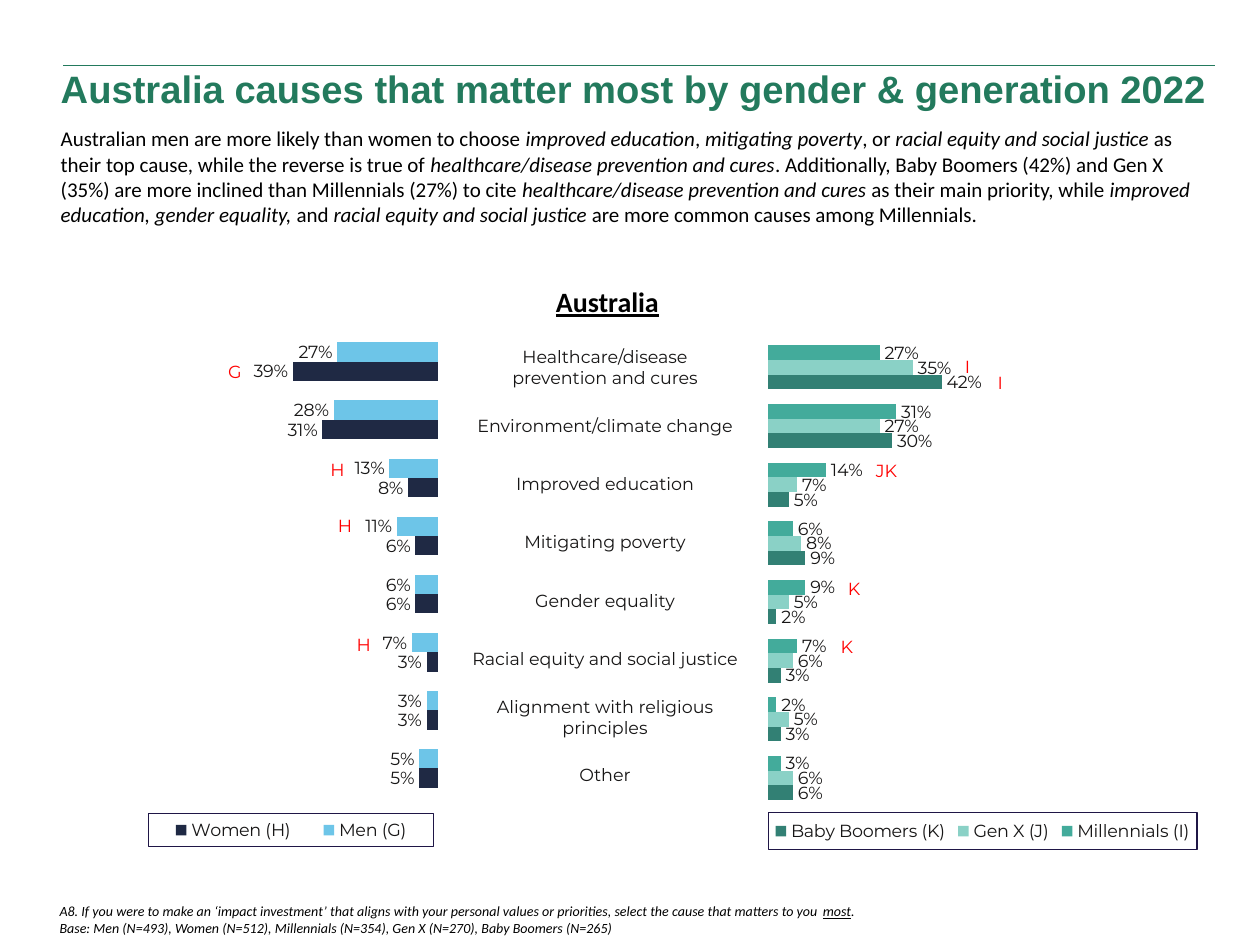
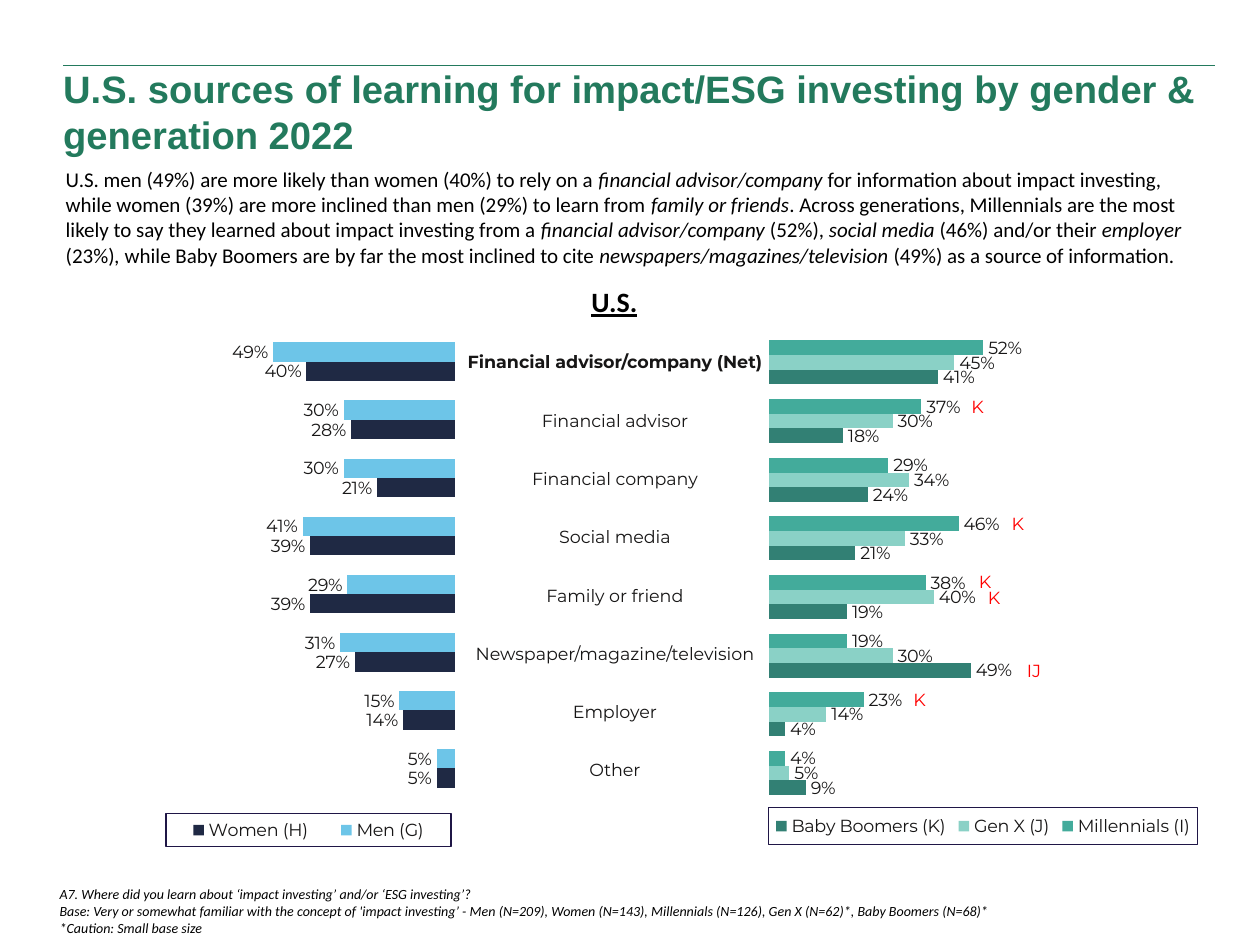
from lxml.etree import SubElement
from pptx import Presentation
from pptx.chart.data import CategoryChartData
from pptx.dml.color import RGBColor
from pptx.enum.chart import XL_CHART_TYPE, XL_LABEL_POSITION, XL_LEGEND_POSITION
from pptx.enum.shapes import MSO_CONNECTOR
from pptx.enum.text import MSO_ANCHOR, MSO_AUTO_SIZE, PP_ALIGN
from pptx.oxml import parse_xml
from pptx.oxml.ns import nsdecls, qn
from pptx.util import Cm, Pt

COLORS = {
    "title": "237A5D", "text": "000000", "chart_text": "171616", "marker": "FF0000",
    "legend_border": "1F1646", "men": "6DC5E8", "women": "1F2944",
    "millennials": "43AB9B", "gen_x": "8AD1C6", "boomers": "328074",
}
GENDERS = [("Men (G)", "men"), ("Women (H)", "women")]
GENERATIONS = [("Millennials (I)", "millennials"), ("Gen X (J)", "gen_x"),
               ("Baby Boomers (K)", "boomers")]

# Fractions of the chart area: left, top, width, height
GENDER_LAYOUT = {"plot": (0.09, 0.04, 0.9, 0.86), "legend": (0.29, 0.93, 0.69, 0.06)}
GENERATION_LAYOUT = {"plot": (0.16, 0.03, 0.79, 0.89), "legend": (0.16, 0.93, 0.82, 0.07)}

MARKER_WIDTHS = {"G": 0.79, "H": 0.81, "I": 0.61, "K": 0.76, "JK": 0.94, "IJ": 0.79}

AUSTRALIA = {
    "title": "Australia causes that matter most by gender & generation 2022",
    "title_box": (0.97, 1.19, 24.43, 1.19),
    "summary": "Australian men are more likely than women to choose _improved education_, "
               "_mitigating poverty_, or _racial equity and social justice _as their top "
               "cause, while the reverse is true of _healthcare/disease prevention and "
               "cures_. Additionally, Baby Boomers (42%) and Gen X (35%) are more inclined "
               "than Millennials (27%) to cite _healthcare/disease prevention and cures _as "
               "their main priority, while _improved education, gender equality, _and "
               "_racial equity and social justice_ are more common causes among Millennials.",
    "summary_box": (0.97, 2.41, 23.42, 2.31),
    "region": "Australia",
    "region_box": (10.9, 5.61, 2.69, 0.94),
    "answers": ["Healthcare/disease\nprevention and cures", "Environment/climate change",
                "Improved education", "Mitigating poverty", "Gender equality",
                "Racial equity and social justice", "Alignment with religious\nprinciples",
                "Other"],
    "answers_at": (8.36, 6.81),
    "by_gender": [(27, 28, 13, 11, 6, 7, 3, 5), (39, 31, 8, 6, 6, 3, 3, 5)],
    "gender_box": (0.58, 6.27, 8.33, 10.9),
    "by_generation": [(27, 31, 14, 6, 9, 7, 2, 3), (35, 27, 7, 8, 5, 6, 5, 6),
                      (42, 30, 5, 9, 2, 3, 3, 6)],
    "generation_box": (13.8, 6.5, 10.54, 10.64),
    "markers": [("G", 4.34, 7.16), ("H", 6.4, 9.12), ("H", 6.55, 10.26), ("H", 6.93, 12.65),
                ("I", 19.2, 7.06), ("I", 19.86, 7.37), ("JK", 17.4, 9.14),
                ("K", 16.84, 11.53), ("K", 16.69, 12.7)],
    "footnote": "A8. If you were to make an ‘impact investment’ that aligns with your personal "
                "values or priorities, select the cause that matters to you _most_.\n"
                "Base: Men (N=493), Women (N=512), Millennials (N=354), Gen X (N=270), "
                "Baby Boomers (N=265)",
}
US = {
    "title": "U.S. sources of learning for impact/ESG investing by gender & generation 2022",
    "title_box": (1.02, 1.19, 23.98, 2.11),
    "summary": "U.S. men (49%) are more likely than women (40%) to rely on a _financial "
               "advisor/company _for information about impact investing, while women (39%) "
               "are more inclined than men (29%) to learn from _family or friends_. Across "
               "generations, Millennials are the most likely to say they learned about "
               "impact investing from a _financial advisor/company _(52%), _social media "
               "_(46%) and/or their _employer _(23%)_, _while Baby Boomers are by far the "
               "most inclined to cite _newspapers/magazines/television _(49%) as a source "
               "of information.",
    "summary_box": (1.07, 3.23, 23.32, 2.31),
    "region": "U.S.",
    "region_box": (11.66, 5.61, 1.45, 0.94),
    "answers": ["Financial advisor/company (Net)", "Financial advisor", "Financial company",
                "Social media", "Family or friend", "Newspaper/magazine/television",
                "Employer", "Other"],
    "answers_at": (8.56, 6.71),
    "by_gender": [(49, 30, 30, 41, 29, 31, 15, 5), (40, 28, 21, 39, 39, 27, 14, 5)],
    "gender_box": (0.93, 6.27, 8.33, 10.9),
    "by_generation": [(52, 37, 29, 46, 38, 19, 23, 4), (45, 30, 34, 33, 40, 30, 14, 5),
                      (41, 18, 24, 21, 19, 49, 4, 9)],
    "generation_box": (13.81, 6.4, 10.54, 10.64),
    "markers": [("K", 19.33, 7.85), ("K", 20.14, 10.21), ("K", 19.48, 11.38),
                ("K", 19.66, 11.71), ("K", 18.16, 13.77), ("IJ", 20.45, 13.18)],
    "footnote": "A7. Where did you learn about ‘impact investing’ and/or ‘ESG investing’?\n"
                "Base: Very or somewhat familiar with the concept of 'impact investing’ - "
                "Men (N=209), Women (N=143), Millennials (N=126), Gen X (N=62)*, "
                "Baby Boomers (N=68)*\n*Caution: Small base size",
}


def rgb(name):
    return RGBColor.from_string(COLORS[name])


def write_text(frame, text, *, size, font="Calibri", color="text", align=PP_ALIGN.LEFT,
               bold=False, italic=False, underline=False, toggle="italic"):
    """Write one paragraph a line; underscores switch the toggle format on and off."""
    for number, line in enumerate(text.split("\n")):
        paragraph = frame.paragraphs[0] if number == 0 else frame.add_paragraph()
        paragraph.alignment = align
        paragraph.space_before = Pt(0)
        for part, words in enumerate(line.split("_")):
            if not words:
                continue
            run = paragraph.add_run()
            run.text = words
            run.font.size, run.font.name = Pt(size), font
            run.font.color.rgb = rgb(color)
            run.font.bold, run.font.italic, run.font.underline = bold, italic, underline
            if part % 2:
                setattr(run.font, toggle, True)


def place(shape, box):
    shape.left, shape.top, shape.width, shape.height = map(Cm, box)


def fill_placeholder(placeholder, text, box, anchor=MSO_ANCHOR.TOP, **text_format):
    place(placeholder, box)
    frame = placeholder.text_frame
    frame.word_wrap = True
    frame.auto_size = MSO_AUTO_SIZE.NONE
    frame.vertical_anchor = anchor
    write_text(frame, text, **text_format)
    for paragraph in frame.paragraphs:
        properties = paragraph._p.get_or_add_pPr()
        properties.set("marL", "0")
        properties.set("indent", "0")
        SubElement(properties, qn("a:buNone"))
    return frame


def add_label(slide, text, box, **text_format):
    label = slide.shapes.add_textbox(*map(Cm, box))
    label.text_frame.word_wrap = False
    write_text(label.text_frame, text, align=PP_ALIGN.CENTER, **text_format)


def add_top_rule(slide):
    rule = slide.shapes.add_connector(MSO_CONNECTOR.STRAIGHT, Cm(1.27), Cm(1.32),
                                      Cm(24.49), Cm(1.32))
    rule.line.color.rgb = rgb("title")
    rule.line.width = Pt(0.5)
    SubElement(rule._element.spPr, qn("a:effectLst"))


def set_chart_layout(parent, position, fractions, inner=False):
    """Give a plot area or legend a fixed place inside its chart."""
    for old_layout in parent.findall(qn("c:layout")):
        parent.remove(old_layout)
    layout = parse_xml(f'<c:layout {nsdecls("c")}><c:manualLayout/></c:layout>')
    settings = [("layoutTarget", "inner")] if inner else []
    settings += [("xMode", "edge"), ("yMode", "edge"), *zip("xywh", fractions)]
    for tag, value in settings:
        SubElement(layout[0], qn(f"c:{tag}")).set("val", str(value))
    parent.insert(position, layout)


def add_legend(chart, fractions):
    chart.has_legend = True
    legend = chart.legend
    legend.position = XL_LEGEND_POSITION.RIGHT
    legend.include_in_layout = False
    set_chart_layout(legend._element, 1, fractions)
    border = parse_xml(
        f'<c:spPr {nsdecls("c", "a")}><a:ln w="9525"><a:solidFill>'
        f'<a:srgbClr val="{COLORS["legend_border"]}"/></a:solidFill></a:ln></c:spPr>')
    legend._element.find(qn("c:overlay")).addnext(border)


def add_bar_chart(slide, box, groups, percentages, layout, leftward=False):
    data = CategoryChartData(number_format="0%")
    data.categories = [str(number) for number in range(1, len(percentages[0]) + 1)]
    for (group, _), shares in zip(groups, percentages):
        data.add_series(group, [share / 100 for share in shares])
    chart = slide.shapes.add_chart(XL_CHART_TYPE.BAR_CLUSTERED, *map(Cm, box), data).chart
    chart.has_title = False
    chart.font.size, chart.font.name = Pt(10), "Montserrat"
    chart.font.color.rgb = rgb("chart_text")

    chart.category_axis.reverse_order = True
    chart.value_axis.reverse_order = leftward
    chart.value_axis.minimum_scale, chart.value_axis.maximum_scale = 0, 1
    chart.value_axis.has_major_gridlines = False
    chart.category_axis.visible = chart.value_axis.visible = False

    bars = chart.plots[0]
    bars.gap_width, bars.overlap = 100, 0
    bars.vary_by_categories = False
    for series, (_, color) in zip(bars.series, groups):
        series.format.fill.solid()
        series.format.fill.fore_color.rgb = rgb(color)
        labels = series.data_labels
        labels.show_value = True
        labels.number_format, labels.number_format_is_linked = "0%", False
        labels.position = XL_LABEL_POSITION.OUTSIDE_END

    plot_area = chart._chartSpace.find(f'{qn("c:chart")}/{qn("c:plotArea")}')
    set_chart_layout(plot_area, 0, layout["plot"], inner=True)
    add_legend(chart, layout["legend"])


def clear_borders(cell):
    properties = cell._tc.get_or_add_tcPr()
    for position, side in enumerate("LRTB"):
        properties.insert(position, parse_xml(
            f'<a:ln{side} {nsdecls("a")} w="0"><a:noFill/></a:ln{side}>'))


def add_answers(slide, answers, left, top):
    table = slide.shapes.add_table(len(answers), 1, Cm(left), Cm(top), Cm(7.67), Cm(9.4)).table
    table.first_row = table.horz_banding = False
    for row, answer in enumerate(answers):
        cell = table.cell(row, 0)
        cell.fill.background()
        clear_borders(cell)
        cell.vertical_anchor = MSO_ANCHOR.MIDDLE
        cell.margin_left = cell.margin_right = cell.margin_top = Cm(0.03)
        cell.margin_bottom = 0
        write_text(cell.text_frame, answer, size=10, font="Montserrat", color="chart_text",
                   align=PP_ALIGN.CENTER, bold=answer.endswith("(Net)"))


def add_survey_slide(presentation, survey):
    slide = presentation.slides.add_slide(presentation.slide_layouts.get_by_name("Two Content"))
    title, summary, footnote = slide.placeholders
    add_top_rule(slide)
    fill_placeholder(title, survey["title"], survey["title_box"], size=21.8, font="Arial",
                     color="title", bold=True)
    fill_placeholder(summary, survey["summary"], survey["summary_box"], size=12)
    footnote_frame = fill_placeholder(footnote, survey["footnote"], (1.07, 17.91, 21.06, 1.09),
                                      MSO_ANCHOR.BOTTOM, size=8, italic=True,
                                      toggle="underline")
    footnote_frame.margin_left = footnote_frame.margin_right = Cm(0.13)

    add_answers(slide, survey["answers"], *survey["answers_at"])
    add_bar_chart(slide, survey["gender_box"], GENDERS, survey["by_gender"],
                  GENDER_LAYOUT, leftward=True)
    add_bar_chart(slide, survey["generation_box"], GENERATIONS, survey["by_generation"],
                  GENERATION_LAYOUT)
    add_label(slide, survey["region"], survey["region_box"], size=16, bold=True, underline=True)
    for letters, left, top in survey["markers"]:
        add_label(slide, letters, (left, top, MARKER_WIDTHS[letters], 0.69), size=10,
                  font="Montserrat", color="marker")


def main():
    presentation = Presentation()
    presentation.slide_width, presentation.slide_height = Cm(25.4), Cm(19.05)
    for survey in (AUSTRALIA, US):
        add_survey_slide(presentation, survey)
    presentation.save("out.pptx")


if __name__ == "__main__":
    main()
